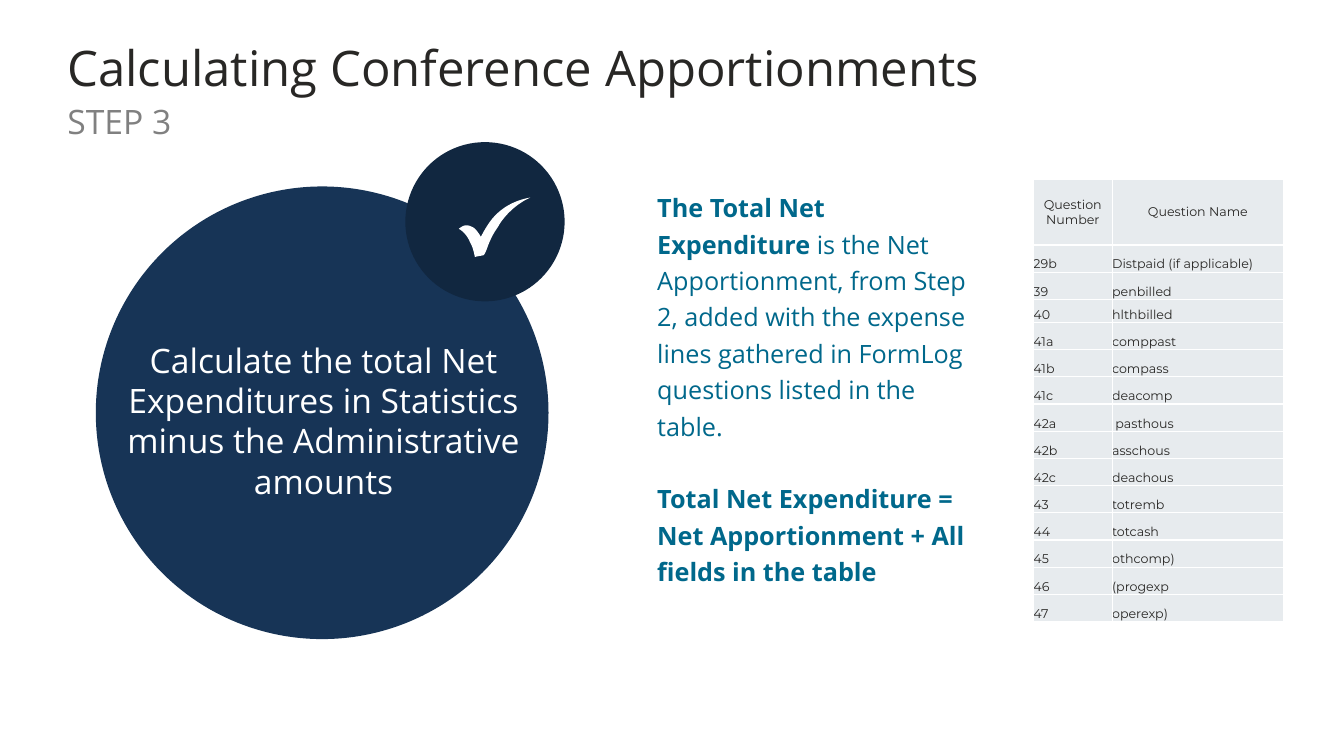
import dataclasses

import pptx
import pptx.dml.color
import pptx.enum.shapes
import pptx.enum.text
import pptx.oxml
import pptx.oxml.ns
import pptx.util

ALIGN = pptx.enum.text.PP_ALIGN
ANCHOR = pptx.enum.text.MSO_ANCHOR
EMU_PER_PX = 9144  # 100 px to the inch


@dataclasses.dataclass(frozen=True)
class Theme:
    text_font: str = "Open Sans"
    table_font: str = "Montserrat"
    ink: str = "282725"
    grey: str = "808080"
    teal: str = "00688B"
    navy: str = "173456"
    dark_navy: str = "112740"
    white: str = "FFFFFF"
    cell: str = "E7EBEE"
    title_size: int = 35
    large_size: int = 24
    body_size: int = 18
    body_leading: int = 26
    table_size: int = 9


THEME = Theme()

QUESTIONS = [
    ("29b", "Distpaid (if applicable)"),
    ("39", "penbilled"),
    ("40", "hlthbilled"),
    ("41a", "comppast"),
    ("41b", "compass"),
    ("41c", "deacomp"),
    ("42a", " pasthous"),
    ("42b", "asschous"),
    ("42c", "deachous"),
    ("43", "totremb"),
    ("44", "totcash"),
    ("45", "othcomp)"),
    ("46", "(progexp"),
    ("47", "operexp)"),
]

CHECK_START = (455, 227)
# Each curve: two control points, then its end.
CHECK_CURVES = [
    ((461, 230), (465, 237), (466, 240)),
    ((469, 245), (470, 250), (471, 255)),
    ((474, 254), (477, 254), (480, 253)),
    ((483, 248), (484, 243), (486, 239)),
    ((489, 232), (492, 228), (494, 225)),
    ((497, 219), (508, 204), (526, 196)),
    ((514, 198), (503, 203), (494, 211)),
    ((486, 218), (480, 229), (477, 235)),
    ((474, 230), (471, 226), (468, 225)),
    ((462, 222), (459, 224), (455, 227)),
]


def px(length):
    return pptx.util.Emu(round(length * EMU_PER_PX))


def rgb(color):
    return pptx.dml.color.RGBColor.from_string(color)


def style_span(span, font, size, color, bold=False):
    span.font.name = font
    span.font.size = pptx.util.Pt(size)
    span.font.color.rgb = rgb(color)
    span.font.bold = bold


def paint(shape, color):
    shape.fill.solid()
    shape.fill.fore_color.rgb = rgb(color)
    shape.line.fill.background()
    shape.shadow.inherit = False


def add_text(page, bounds, paragraphs, size, color, align=ALIGN.LEFT, grow=True):
    """Add a text box; each paragraph is a list of (text, bold) spans."""
    box = page.shapes.add_textbox(*map(px, bounds))
    frame = box.text_frame
    frame.word_wrap = True
    if grow:
        frame.auto_size = pptx.enum.text.MSO_AUTO_SIZE.SHAPE_TO_FIT_TEXT
    for index, spans in enumerate(paragraphs):
        para = frame.add_paragraph() if index else frame.paragraphs[0]
        para.alignment = align
        for text, bold in spans:
            span = para.add_run()
            span.text = text
            style_span(span, THEME.text_font, size, color, bold)
    return frame


def add_circle(page, left, top, diameter, color):
    oval = pptx.enum.shapes.MSO_SHAPE.OVAL
    paint(page.shapes.add_shape(oval, *map(px, (left, top, diameter, diameter))), color)


def curve_points(start, first, second, end, steps=8):
    """Sample a cubic curve, leaving out its start."""
    for step in range(1, steps + 1):
        t = step / steps
        u = 1 - t
        yield tuple(
            px(u**3 * a + 3 * u * u * t * b + 3 * u * t * t * c + t**3 * d)
            for a, b, c, d in zip(start, first, second, end)
        )


def add_check_mark(page):
    builder = page.shapes.build_freeform(*map(px, CHECK_START), scale=1.0)
    start = CHECK_START
    points = []
    for first, second, end in CHECK_CURVES:
        points.extend(curve_points(start, first, second, end))
        start = end
    builder.add_line_segments(points, close=True)
    paint(builder.convert_to_shape(), THEME.white)


def add_borders(cell):
    properties = cell._tc.get_or_add_tcPr()
    for index, side in enumerate(("lnL", "lnR", "lnT", "lnB")):
        border = pptx.oxml.parse_xml(
            f'<a:{side} {pptx.oxml.ns.nsdecls("a")} w="12700"><a:solidFill>'
            f'<a:srgbClr val="{THEME.white}"/></a:solidFill></a:{side}>'
        )
        properties.insert(index, border)


def fill_cell(cell, text, is_header):
    cell.margin_left = cell.margin_right = cell.margin_top = cell.margin_bottom = 0
    cell.vertical_anchor = ANCHOR.MIDDLE if is_header else ANCHOR.BOTTOM
    cell.fill.solid()
    cell.fill.fore_color.rgb = rgb(THEME.cell)
    add_borders(cell)
    para = cell.text_frame.paragraphs[0]
    para.text = text
    para.alignment = ALIGN.CENTER if is_header else ALIGN.LEFT
    style_span(para.runs[0], THEME.table_font, THEME.table_size, THEME.ink)


def add_question_table(page):
    rows = [("Question Number", "Question Name"), *QUESTIONS]
    frame = page.shapes.add_table(len(rows), 2, *map(px, (1025, 178, 248, 437)))
    table = frame.table
    table.first_row = table.horz_banding = False
    for column, width in zip(table.columns, (78, 170)):
        column.width = px(width)
    special_heights = {0: 65, 3: 23}
    for row_index, texts in enumerate(rows):
        table.rows[row_index].height = px(special_heights.get(row_index, 27))
        for column_index, text in enumerate(texts):
            fill_cell(table.cell(row_index, column_index), text, row_index == 0)


def add_explanation(page):
    paragraphs = [
        [
            ("The Total Net Expenditure ", True),
            ("is the Net Apportionment, from Step 2, added with the expense "
             "lines gathered in FormLog questions listed in the table.", False),
        ],
        [("Total Net Expenditure = Net Apportionment + All fields in the table", True)],
    ]
    frame = add_text(page, (642, 180, 332, 409), paragraphs, THEME.body_size, THEME.teal)
    leading = pptx.util.Pt(THEME.body_leading)
    for para in frame.paragraphs:
        para.line_spacing = leading
    frame.paragraphs[1].space_before = leading


def add_headings(page):
    title = add_text(page, (57, 37, 1150, 66),
                     [[("Calculating Conference Apportionments", False)]],
                     THEME.title_size, THEME.ink, grow=False)
    title.vertical_anchor = ANCHOR.MIDDLE
    title.paragraphs[0].line_spacing = 0.9
    add_text(page, (57, 95, 1169, 50), [[("STEP 3", False)]], THEME.large_size, THEME.grey)


def main():
    deck = pptx.Presentation()
    deck.slide_width, deck.slide_height = px(1333), px(750)
    page = deck.slides.add_slide(deck.slide_layouts[6])
    add_explanation(page)
    add_circle(page, 95, 185, 449, THEME.navy)
    add_circle(page, 402, 141, 158, THEME.dark_navy)
    task = "Calculate the total Net Expenditures in Statistics minus the Administrative amounts"
    add_text(page, (108, 332, 426, 172), [[(task, False)]],
             THEME.large_size, THEME.white, ALIGN.CENTER)
    add_check_mark(page)
    add_headings(page)
    add_question_table(page)
    deck.save("out.pptx")


if __name__ == "__main__":
    main()
